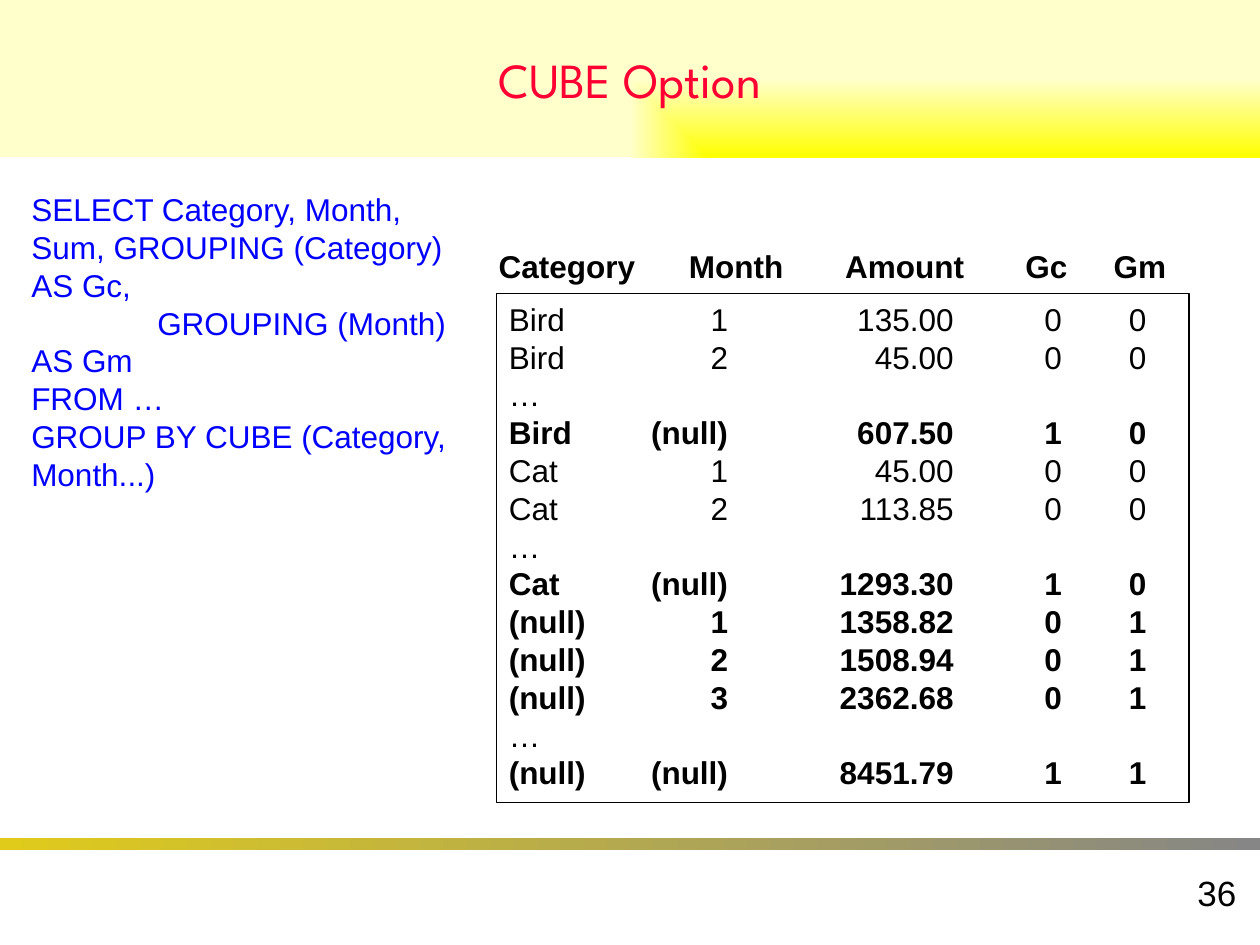
"""Builds the CUBE Option slide: a query beside its tabbed result."""
from lxml.etree import SubElement
from pptx import Presentation
from pptx.dml.color import RGBColor
from pptx.enum.shapes import MSO_SHAPE
from pptx.enum.text import MSO_ANCHOR, PP_ALIGN
from pptx.oxml.ns import qn
from pptx.util import Inches, Pt

BLACK = RGBColor(0, 0, 0)
BLUE = RGBColor(0, 0, 0xFF)
RED = RGBColor(0xFF, 0, 0x33)
YELLOW = RGBColor(0xFF, 0xFF, 0)
CREAM = RGBColor(0xFF, 0xFF, 0xCC)
GOLD = RGBColor(0xE0, 0xCB, 0x1B)
GRAY = RGBColor(0x86, 0x86, 0x86)

WIDE, HIGH = 10, 7.5
TITLE = "CUBE Option"
PAGE = "36"
QUERY = [
    "SELECT Category, Month, Sum, GROUPING (Category) AS Gc,",
    "\tGROUPING (Month) AS Gm",
    "FROM …",
    "GROUP BY CUBE (Category, Month...)",
]
HEAD = ["Category", "Month", "Amount", "Gc", "Gm"]
ROWS = [
    ["Bird", "1", "135.00", "0", "0"],
    ["Bird", "2", "45.00", "0", "0"],
    ["…"],
    ["Bird", "(null)", "607.50", "1", "0"],
    ["Cat", "1", "45.00", "0", "0"],
    ["Cat", "2", "113.85", "0", "0"],
    ["…"],
    ["Cat", "(null)", "1293.30", "1", "0"],
    ["(null)", "1", "1358.82", "0", "1"],
    ["(null)", "2", "1508.94", "0", "1"],
    ["(null)", "3", "2362.68", "0", "1"],
    ["…"],
    ["(null)", "(null)", "8451.79", "1", "1"],
]
HEAD_TABS = [1.51, 2.75, 4.18, 4.88]
ROW_TABS = [1.74, 3.53, 4.39, 5.06]


def place(*area):
    return [Inches(n) for n in area]


def add_box(slide, *area):
    box = slide.shapes.add_shape(MSO_SHAPE.RECTANGLE, *place(*area))
    box.shadow.inherit = False
    box.line.fill.background()
    return box


def blend(box, *tints):
    box.fill.gradient()
    box.fill.gradient_angle = 0
    for stop, tint in zip(box.fill.gradient_stops, tints):
        stop.color.rgb = tint


def to_corner(box):
    grad = box.element.spPr.find(qn("a:gradFill"))
    grad.remove(grad.find(qn("a:lin")))
    ring = SubElement(grad, qn("a:path"), {"path": "rect"})
    SubElement(ring, qn("a:fillToRect"), {"l": "100000", "t": "100000"})


def set_tabs(para, stops, align):
    tabs = SubElement(para._p.get_or_add_pPr(), qn("a:tabLst"))
    for stop in stops:
        SubElement(tabs, qn("a:tab"), {"pos": str(Inches(stop)), "algn": align})


def write(box, lines, stops=(), tab="l", anchor=MSO_ANCHOR.TOP,
          align=PP_ALIGN.LEFT, pitch=None, tint=BLACK, **style):
    frame = box.text_frame
    frame.word_wrap = True
    frame.vertical_anchor = anchor
    for n, (text, bold) in enumerate(lines):
        para = frame.add_paragraph() if n else frame.paragraphs[0]
        para.alignment = align
        if pitch:
            para.line_spacing = pitch
        if stops:
            set_tabs(para, stops, tab)
        run = para.add_run()
        run.text = text
        look = {"name": "Arial", "size": Pt(18), "bold": bold, **style}
        for key, value in look.items():
            setattr(run.font, key, value)
        run.font.color.rgb = tint


def is_total(row):
    return "(null)" in row


def main():
    deck = Presentation()
    deck.slide_width, deck.slide_height = place(WIDE, HIGH)
    slide = deck.slides.add_slide(deck.slide_layouts[6])
    add_text = slide.shapes.add_textbox
    pitch = Pt(21.6)

    rule = add_box(slide, 0, 6.65, WIDE, 0.1)
    blend(rule, GOLD, GRAY)

    band = add_box(slide, 0, 0, WIDE, HIGH / 6)
    blend(band, YELLOW, CREAM)
    to_corner(band)
    write(band, [(TITLE, False)], anchor=MSO_ANCHOR.MIDDLE,
          align=PP_ALIGN.CENTER, tint=RED, name="League Spartan", size=Pt(28))

    page = add_text(*place(7.83, 6.83, 2.08, 0.5))
    write(page, [(PAGE, False)], anchor=MSO_ANCHOR.MIDDLE,
          align=PP_ALIGN.RIGHT, size=Pt(20))

    grid = add_box(slide, 3.94, 2.33, 5.5, 4.04)
    grid.fill.background()
    grid.line.color.rgb = BLACK
    grid.line.width = Pt(1)
    lines = [("\t".join(row), is_total(row)) for row in ROWS]
    write(grid, lines, ROW_TABS, "r", pitch=pitch)

    head = add_text(*place(3.86, 1.91, 5.83, 0.4))
    write(head, [("\t".join(HEAD), True)], HEAD_TABS, pitch=pitch)

    query = add_text(*place(0.15, 1.46, 3.71, 2.52))
    write(query, [(text, False) for text in QUERY], [1], pitch=pitch, tint=BLUE)

    deck.save("out.pptx")


if __name__ == "__main__":
    main()
